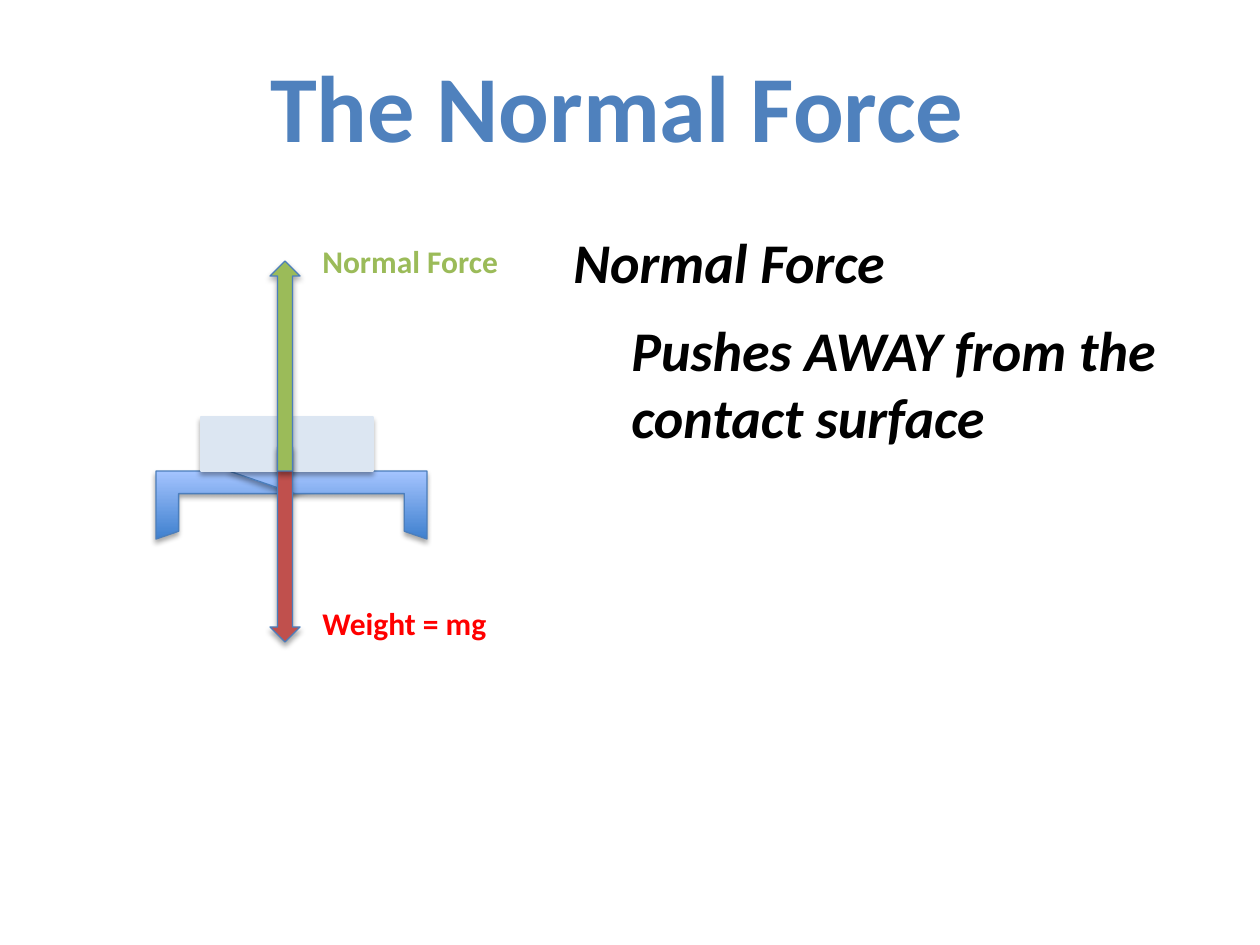
from dataclasses import dataclass

from lxml import etree
from pptx import Presentation
from pptx.dml.color import RGBColor
from pptx.enum.shapes import MSO_SHAPE
from pptx.enum.text import MSO_AUTO_SIZE, PP_ALIGN
from pptx.oxml.ns import qn
from pptx.util import Pt

RECT, FRAME = MSO_SHAPE.RECTANGLE, MSO_SHAPE.HALF_FRAME
UP, DOWN = MSO_SHAPE.UP_ARROW, MSO_SHAPE.DOWN_ARROW
LEFT, CENTER = PP_ALIGN.LEFT, PP_ALIGN.CENTER
GROW = MSO_AUTO_SIZE.SHAPE_TO_FIT_TEXT
SCALE = 914400 / 126


@dataclass(frozen=True)
class Theme:
    font: str = "Calibri"
    title: int = 54
    body: int = 32
    label: int = 18
    blue: str = "4F81BD"
    edge: str = "4B7EBC"
    deep: str = "3F80CE"
    light: str = "A4C4FF"
    pale: str = "DCE6F2"
    green: str = "9BBB59"
    brick: str = "C0504D"
    red: str = "FF0000"
    black: str = "000000"


THEME = Theme()


def emu(*sizes):
    return [round(size * SCALE) for size in sizes]


def rgb(code):
    return RGBColor.from_string(code)


def write(slide, text, box, size, color, italic=False, align=LEFT, wrap=False):
    frame = slide.shapes.add_textbox(*emu(*box)).text_frame
    frame.word_wrap = wrap
    frame.auto_size = GROW
    para = frame.paragraphs[0]
    para.alignment = align
    run = para.add_run()
    run.text = text
    font = run.font
    font.name, font.size, font.bold, font.italic = THEME.font, Pt(size), True, italic
    font.color.rgb = rgb(color)


def shade(shape):
    shape.shadow.inherit = False
    effects = shape._element.spPr.find(qn("a:effectLst"))
    outer = etree.SubElement(effects, qn("a:outerShdw"), blurRad=str(Pt(3.1)),
                             dist=str(Pt(1.8)), dir="5400000", rotWithShape="0")
    color = etree.SubElement(outer, qn("a:srgbClr"), val=THEME.black)
    etree.SubElement(color, qn("a:alpha"), val="35000")


def draw(slide, kind, box, fills, edge=THEME.edge):
    shape = slide.shapes.add_shape(kind, *emu(*box))
    if len(fills) == 1:
        shape.fill.solid()
        shape.fill.fore_color.rgb = rgb(fills[0])
    else:
        shape.fill.gradient()
        shape.fill.gradient_angle = 90
        for stop, code in zip(shape.fill.gradient_stops, fills):
            stop.color.rgb = rgb(code)
    shape.line.color.rgb = rgb(edge)
    shape.line.width = Pt(0.75)
    shade(shape)
    return shape


def table(slide, left, top, width):
    half = 198
    blend = (THEME.deep, THEME.light)
    draw(slide, FRAME, (left, top, half, 68), blend)
    right = draw(slide, FRAME, (left + width - half, top, half, 68), blend)
    right._element.spPr.find(qn("a:xfrm")).set("flipH", "1")


def forces(slide, left, top, width, height):
    desk = top + 235
    axis, arrow = left + 114, 30
    note = axis + 40
    table(slide, left, desk, width)
    draw(slide, RECT, (left + 45, desk - 54, 172, 54), (THEME.pale,), THEME.pale)
    start = desk - 24
    draw(slide, DOWN, (axis, start, arrow, top + height - start), (THEME.brick,))
    write(slide, "Weight = mg", (note, top + 362, 193, 51), THEME.label, THEME.red)
    draw(slide, UP, (axis, top + 25, arrow, desk - top - 25), (THEME.green,))
    write(slide, "Normal Force", (note, top, 204, 51), THEME.label, THEME.green)


def points(slide, left, top, width):
    style = dict(size=THEME.body, color=THEME.black, italic=True, wrap=True)
    indent = 58
    write(slide, "Normal Force", (left, top, 522, 81), **style)
    write(slide, "Pushes AWAY from the contact surface",
          (left + indent, top + 88, width - indent, 149), **style)


def main():
    deck = Presentation()
    deck.slide_width, deck.slide_height = emu(1260, 945)
    slide = deck.slides.add_slide(deck.slide_layouts[6])
    write(slide, "The Normal Force", (253, 42, 728, 127), THEME.title, THEME.blue,
          align=CENTER)
    forces(slide, 156, 236, 271, 406)
    points(slide, 561, 221, 663)
    deck.save("out.pptx")


if __name__ == "__main__":
    main()
